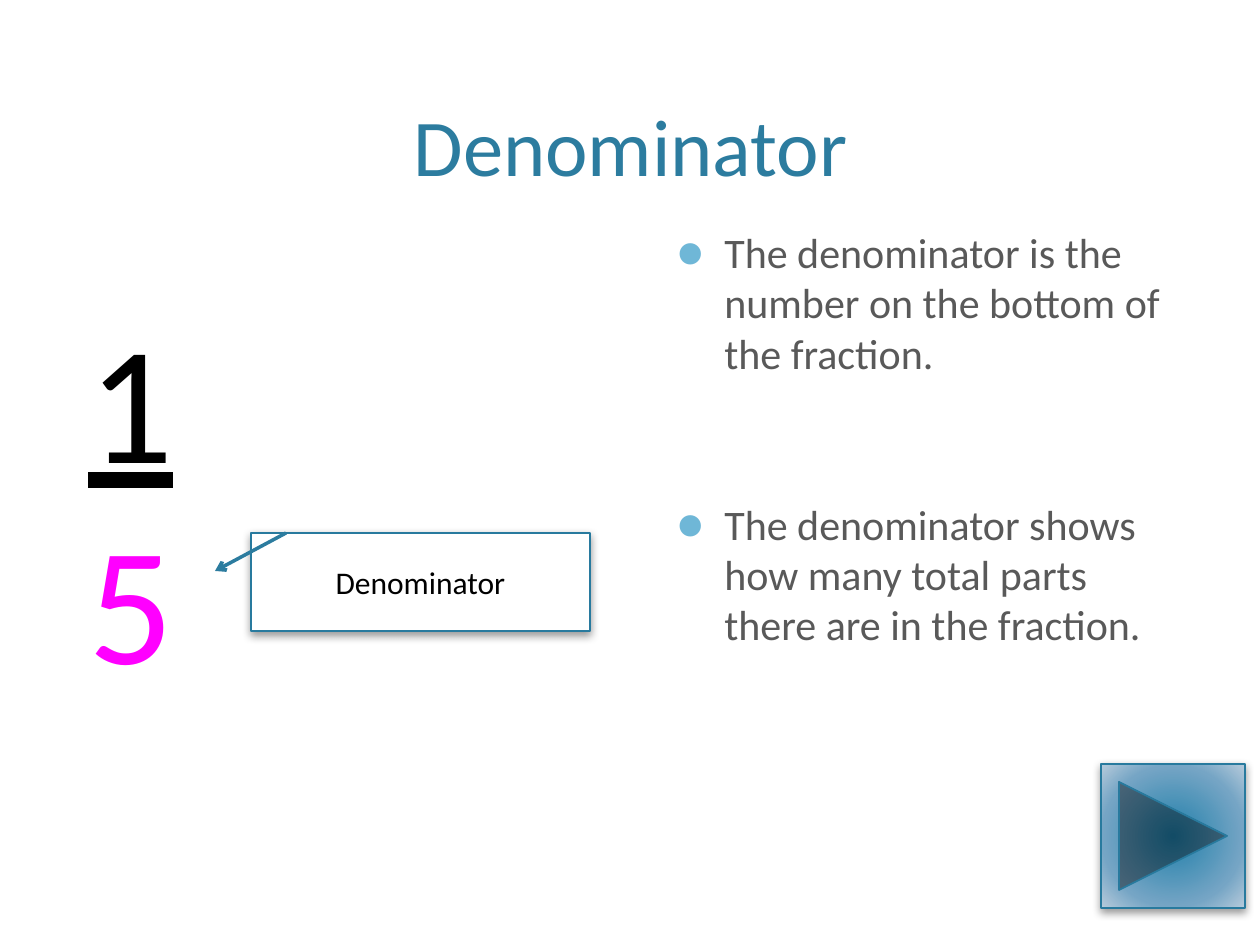
from lxml.etree import SubElement
from pptx import Presentation
from pptx.dml.color import RGBColor
from pptx.enum.shapes import MSO_CONNECTOR, MSO_SHAPE
from pptx.enum.text import MSO_ANCHOR, MSO_AUTO_SIZE, PP_ALIGN
from pptx.oxml.ns import qn
from pptx.util import Emu, Pt

PX = 914400 / 126
FONT = "Calibri"
BLUE, EDGE, BULLET = "2C7C9F", "287A9E", "6FB7D7"
BLACK, WHITE, GRAY, MAGENTA = "000000", "FFFFFF", "595959", "FF00FF"
BUTTON_STOPS = [(0, "2180AA"), (69, "75A5C5"), (100, "B8CCDC")]
FACTS = [
    "The denominator is the number on the bottom of the fraction.",
    "The denominator shows how many total parts there are in the fraction.",
]
FACT_SPACING = [20, 69]


def px(*lengths):
    return [Emu(round(length * PX)) for length in lengths]


def rgb(value):
    return RGBColor.from_string(value)


def child(parent, tag, **attributes):
    element = SubElement(parent, qn(tag))
    for name, value in attributes.items():
        element.set(name, str(value))
    return element


def write(paragraph, text, size, color, align=PP_ALIGN.LEFT):
    paragraph.text = text
    paragraph.alignment = align
    paragraph.font.name = FONT
    paragraph.font.size = Pt(size)
    paragraph.font.color.rgb = rgb(color)


def add_edge_and_shadow(shape):
    shape.line.color.rgb = rgb(EDGE)
    shape.line.width = Pt(1)
    shape.shadow.inherit = False
    effects = shape._element.spPr.find(qn("a:effectLst"))
    shadow = child(effects, "a:outerShdw", blurRad=Pt(5), dist=Pt(2),
                   dir=90 * 60000, rotWithShape=0)
    child(child(shadow, "a:srgbClr", val=BLACK), "a:alpha", val=40000)


def add_bullet(paragraph, indent):
    properties = paragraph._p.get_or_add_pPr()
    properties.set("marL", str(indent))
    properties.set("indent", str(-indent))
    child(child(properties, "a:buClr"), "a:srgbClr", val=BULLET)
    child(properties, "a:buSzPct", val=110000)
    child(properties, "a:buFont", typeface=FONT)
    child(properties, "a:buChar", char="●")


def place_title(slide, box):
    title = slide.shapes.title
    title.left, title.top, title.width, title.height = px(*box)
    title.text_frame.vertical_anchor = MSO_ANCHOR.BOTTOM
    write(title.text_frame.paragraphs[0], "Denominator", 46, BLUE, PP_ALIGN.CENTER)


def add_text_box(slide, box, count):
    """Return the frame of a wrapping text box with count paragraphs."""
    frame = slide.shapes.add_textbox(*px(*box)).text_frame
    frame.word_wrap = True
    for _ in range(count - 1):
        frame.add_paragraph()
    return frame


def add_facts(slide, box):
    frame = add_text_box(slide, box, len(FACTS))
    indent, = px(48)
    for paragraph, fact, spacing in zip(frame.paragraphs, FACTS, FACT_SPACING):
        write(paragraph, fact, 24, GRAY)
        paragraph.space_before = Pt(spacing)
        add_bullet(paragraph, indent)


def add_next_button(slide, box):
    button = slide.shapes.add_shape(MSO_SHAPE.ACTION_BUTTON_FORWARD_OR_NEXT, *px(*box))
    button.fill.gradient()
    gradient = button._element.spPr.find(qn("a:gradFill"))
    for part in list(gradient):
        gradient.remove(part)
    stops = child(gradient, "a:gsLst")
    for position, color in BUTTON_STOPS:
        child(child(stops, "a:gs", pos=position * 1000), "a:srgbClr", val=color)
    radial = child(gradient, "a:path", path="circle")
    child(radial, "a:fillToRect", l=100000, t=100000, r=100000, b=100000)
    add_edge_and_shadow(button)


def add_fraction(slide, box):
    frame = add_text_box(slide, box, 2)
    frame.auto_size = MSO_AUTO_SIZE.SHAPE_TO_FIT_TEXT
    numerator, denominator = frame.paragraphs
    write(numerator, "1", 96, BLACK)
    numerator.runs[0].font.underline = True
    write(denominator, "5", 96, MAGENTA)


def add_label(slide, box):
    """Add the denominator label and its arrow to the fraction."""
    left, top, width, height = box
    label = slide.shapes.add_shape(MSO_SHAPE.RECTANGLE, *px(*box))
    label.fill.solid()
    label.fill.fore_color.rgb = rgb(WHITE)
    add_edge_and_shadow(label)
    label.text_frame.vertical_anchor = MSO_ANCHOR.MIDDLE
    write(label.text_frame.paragraphs[0], "Denominator", 18, BLACK, PP_ALIGN.CENTER)

    arrow = slide.shapes.add_connector(
        MSO_CONNECTOR.STRAIGHT, *px(left + 35, top, left - 36, top + 38))
    arrow.line.color.rgb = rgb(BLUE)
    arrow.line.width = Pt(2)
    child(arrow.line._get_or_add_ln(), "a:tailEnd", type="arrow")
    child(arrow._element.spPr, "a:effectLst")


def main():
    presentation = Presentation()
    presentation.slide_width, presentation.slide_height = px(1260, 945)
    slide = presentation.slides.add_slide(presentation.slide_layouts[5])
    place_title(slide, (76, 15, 1109, 184))
    add_facts(slide, (664, 220, 519, 598))
    add_next_button(slide, (1101, 764, 144, 144))
    add_fraction(slide, (76, 289, 175, 420))
    add_label(slide, (251, 533, 339, 98))
    presentation.save("out.pptx")


if __name__ == "__main__":
    main()
